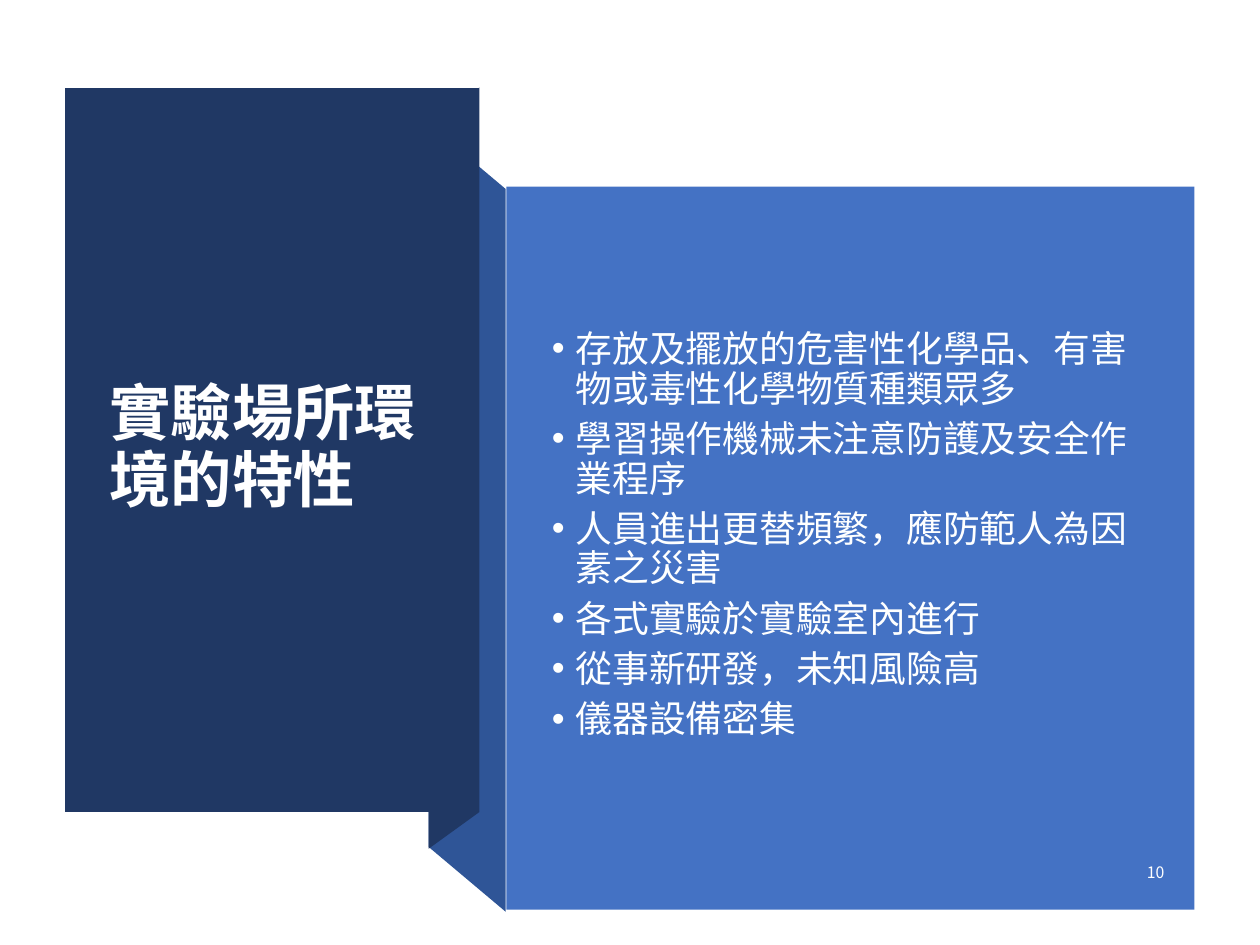
from dataclasses import dataclass

from lxml import etree
from pptx import Presentation
from pptx import util as u
from pptx.dml.color import RGBColor
from pptx.enum import shapes, text
from pptx.oxml import ns

Pt = u.Pt


@dataclass
class Theme:
    navy: str = "203864"
    fold: str = "2F5597"
    panel: str = "4472C4"
    white: str = "FFFFFF"
    body_ink: str = "FEFFFF"
    face: str = "Noto Sans CJK SC"
    title_size: int = 35
    body_size: int = 21
    number_size: int = 9


theme = Theme()


def paint(shape, color):
    shape.shadow.inherit = False
    shape.fill.solid()
    shape.fill.fore_color.rgb = RGBColor.from_string(color)
    shape.line.fill.background()


def style(paragraph, size, color, bold=False):
    font = paragraph.font
    font.name = theme.face
    font.size = Pt(size)
    font.bold = bold
    font.color.rgb = RGBColor.from_string(color)
    latin = paragraph._p.pPr.find(ns.qn("a:defRPr")).find(ns.qn("a:latin"))
    east_asian = etree.Element(ns.qn("a:ea"), typeface=theme.face)
    latin.addnext(east_asian)


prs = Presentation()
prs.slide_width, prs.slide_height = Pt(720), Pt(540)
slide = prs.slides.add_slide(prs.slide_layouts[1])
title, body = slide.placeholders

ribbon = [
    (theme.fold, [(289.4, 520.8), (244.8, 483.8), (244.8, 71.3), (289.4, 108)]),
    (theme.navy, [(273.6, 463.7), (244.8, 484.6), (244.8, 70.6), (273.6, 49.7)]),
    (theme.navy, [(37.4, 50.4), (273.6, 50.4), (273.6, 464.1), (37.4, 464.1)]),
]
for color, corners in ribbon:
    outline = slide.shapes.build_freeform(*corners[0], scale=Pt(1))
    outline.add_line_segments(corners[1:], close=True)
    paint(outline.convert_to_shape(), color)

panel = slide.shapes.add_shape(
    shapes.MSO_SHAPE.RECTANGLE, Pt(289.4), Pt(106.6), Pt(393.1), Pt(413.3))
paint(panel, theme.panel)

number = slide.shapes.add_textbox(Pt(632.2), Pt(486), Pt(40.3), Pt(25.2))

placements = [
    (title, 55.4, 77, 200.2, 359.3),
    (body, 308.2, 135.4, 351.4, 341.3),
]
for holder, left, top, width, height in placements:
    holder.left, holder.top = Pt(left), Pt(top)
    holder.width, holder.height = Pt(width), Pt(height)
    slide.shapes._spTree.append(holder._element)

for box in (title, body, number):
    frame = box.text_frame
    frame.word_wrap = True
    frame.auto_size = text.MSO_AUTO_SIZE.NONE
    frame.vertical_anchor = text.MSO_ANCHOR.MIDDLE

title.text_frame.text = "實驗場所環境的特性"
heading = title.text_frame.paragraphs[0]
heading.alignment = text.PP_ALIGN.LEFT
heading.line_spacing = 0.9
style(heading, theme.title_size, theme.white, bold=True)

traits = [
    "存放及擺放的危害性化學品、有害物或毒性化學物質種類眾多",
    "學習操作機械未注意防護及安全作業程序",
    "人員進出更替頻繁，應防範人為因素之災害",
    "各式實驗於實驗室內進行",
    "從事新研發，未知風險高",
    "儀器設備密集",
]
body.text_frame.text = "\n".join(traits)
for index, trait in enumerate(body.text_frame.paragraphs):
    props = trait._p.get_or_add_pPr()
    props.set("marL", str(Pt(13.5)))
    props.set("indent", str(-Pt(13.5)))
    etree.SubElement(props, ns.qn("a:buFont"), typeface="Arial")
    etree.SubElement(props, ns.qn("a:buChar"), char="•")
    trait.line_spacing = 0.9
    trait.space_before = Pt(6 if index else 0)
    style(trait, theme.body_size, theme.body_ink)

number.text_frame.text = "10"
page = number.text_frame.paragraphs[0]
page.alignment = text.PP_ALIGN.RIGHT
page.space_after = Pt(6)
style(page, theme.number_size, theme.white)

prs.save("out.pptx")
